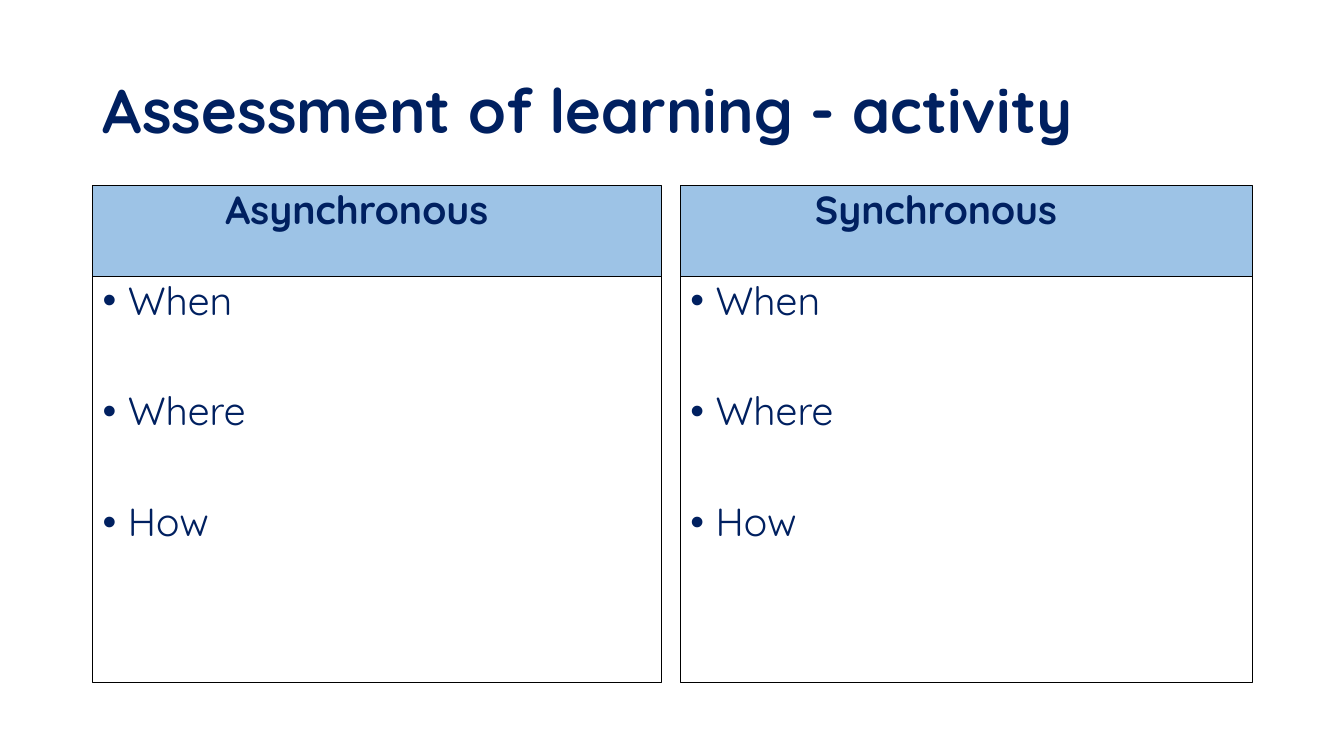
from lxml import etree
from pptx import Presentation
from pptx.dml.color import RGBColor
from pptx.enum import shapes, text
from pptx.oxml.ns import qn
from pptx.util import Inches, Pt

NAVY = RGBColor(0x00, 0x20, 0x60)
SKY = RGBColor(0x9D, 0xC3, 0xE6)
BLACK = RGBColor(0, 0, 0)

TOP, HEADER_HEIGHT, BODY_HEIGHT = 1.84, 0.9, 4.03
PROMPTS = ["When", "Where", "How"]
COLUMNS = [
    {"heading": "Asynchronous", "left": 0.92, "width": 5.64, "right_inset": 0.5},
    {"heading": "Synchronous", "left": 6.75, "width": 5.67, "right_inset": 0.7},
]


def format_font(font, **changes):
    values = {"name": "Quicksand", "size": Pt(28), "bold": False} | changes
    for name, value in values.items():
        setattr(font, name, value)
    font.color.rgb = NAVY


def add_title(page, left, top, width, height):
    title = page.shapes.title
    place = {"left": left, "top": top, "width": width, "height": height}
    for name, value in place.items():
        setattr(title, name, Inches(value))
    frame = title.text_frame
    frame.text = "Assessment of learning - activity"
    frame.auto_size = text.MSO_AUTO_SIZE.NONE
    frame.vertical_anchor = text.MSO_ANCHOR.MIDDLE
    para = frame.paragraphs[0]
    para.alignment = text.PP_ALIGN.LEFT
    para.line_spacing = 0.9
    format_font(para.runs[0].font, size=Pt(44), bold=True)


def add_panel(page, left, top, width, height, fill=None):
    panel = page.shapes.add_shape(
        shapes.MSO_SHAPE.RECTANGLE, *map(Inches, (left, top, width, height))
    )
    panel.shadow.inherit = False
    if fill is None:
        panel.fill.background()
    else:
        panel.fill.solid()
        panel.fill.fore_color.rgb = fill
    panel.line.color.rgb = BLACK
    panel.line.width = Pt(0.75)
    panel.text_frame.word_wrap = True
    panel.text_frame.vertical_anchor = text.MSO_ANCHOR.TOP
    return panel.text_frame


def add_bullet(para):
    properties = para._p.get_or_add_pPr()
    properties.set("marL", str(Inches(0.25)))
    properties.set("indent", str(Inches(-0.25)))
    etree.SubElement(properties, qn("a:buFont"), typeface="Arial")
    etree.SubElement(properties, qn("a:buChar"), char="•")


def add_column(page, heading, left, width, right_inset):
    header = add_panel(page, left, TOP, width, HEADER_HEIGHT, SKY)
    header.margin_right = Inches(right_inset)
    para = header.paragraphs[0]
    para.alignment = text.PP_ALIGN.CENTER
    para.line_spacing = 0.9
    span = para.add_run()
    span.text = heading
    format_font(span.font, bold=True)

    body = add_panel(page, left, TOP + HEADER_HEIGHT, width, BODY_HEIGHT)
    for index, prompt in enumerate(PROMPTS):
        para = body.add_paragraph() if index else body.paragraphs[0]
        add_bullet(para)
        para.alignment = text.PP_ALIGN.LEFT
        para.line_spacing = 0.9
        para.space_before = Pt(49 if index else 0)
        span = para.add_run()
        span.text = prompt
        format_font(span.font)


def main():
    deck = Presentation()
    deck.slide_width, deck.slide_height = Inches(13.33), Inches(7.5)
    page = deck.slides.add_slide(deck.slide_layouts.get_by_name("Title Only"))
    add_title(page, 0.92, 0.4, 11.5, 1.45)
    for column in COLUMNS:
        add_column(page, **column)
    deck.save("out.pptx")


if __name__ == "__main__":
    main()
